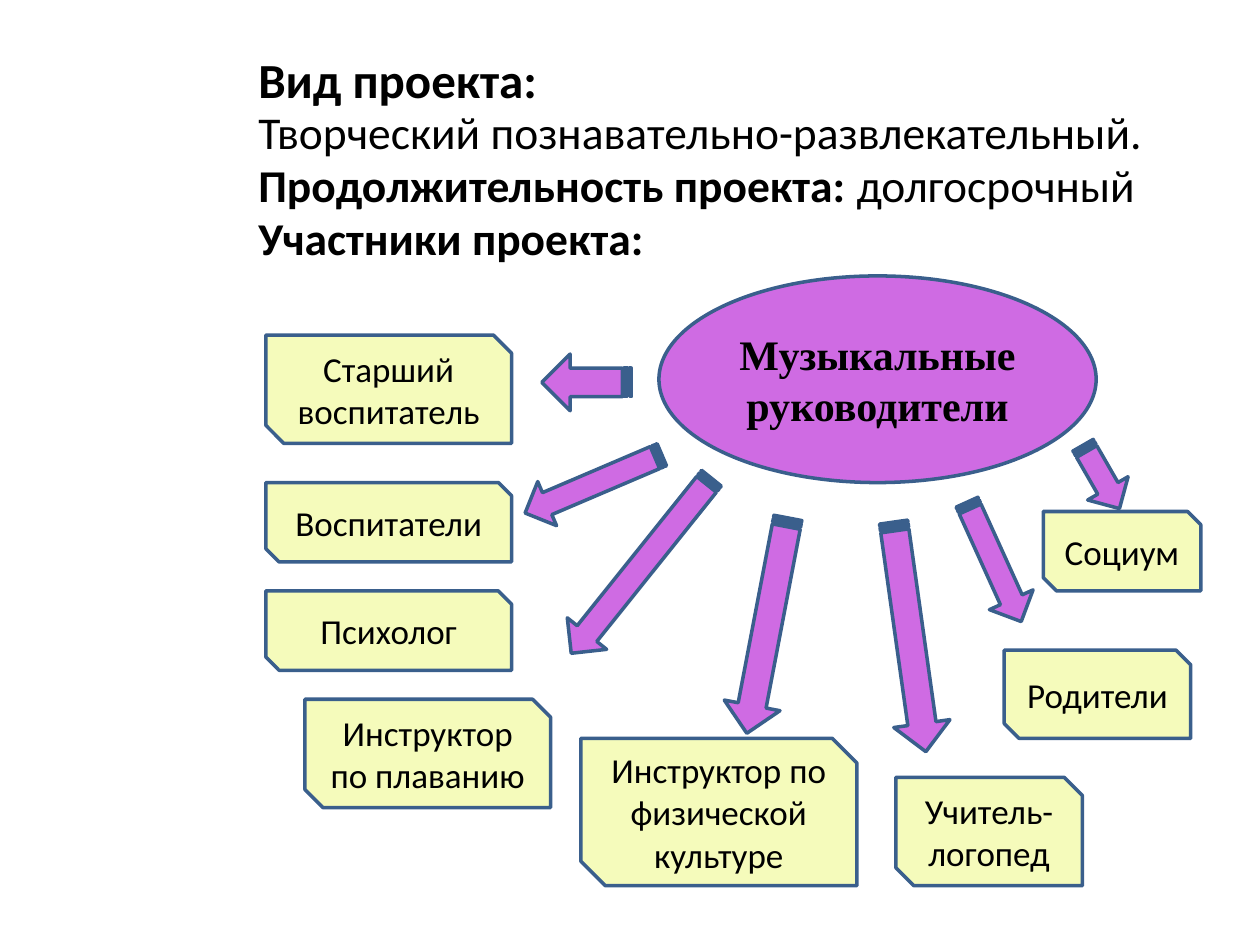
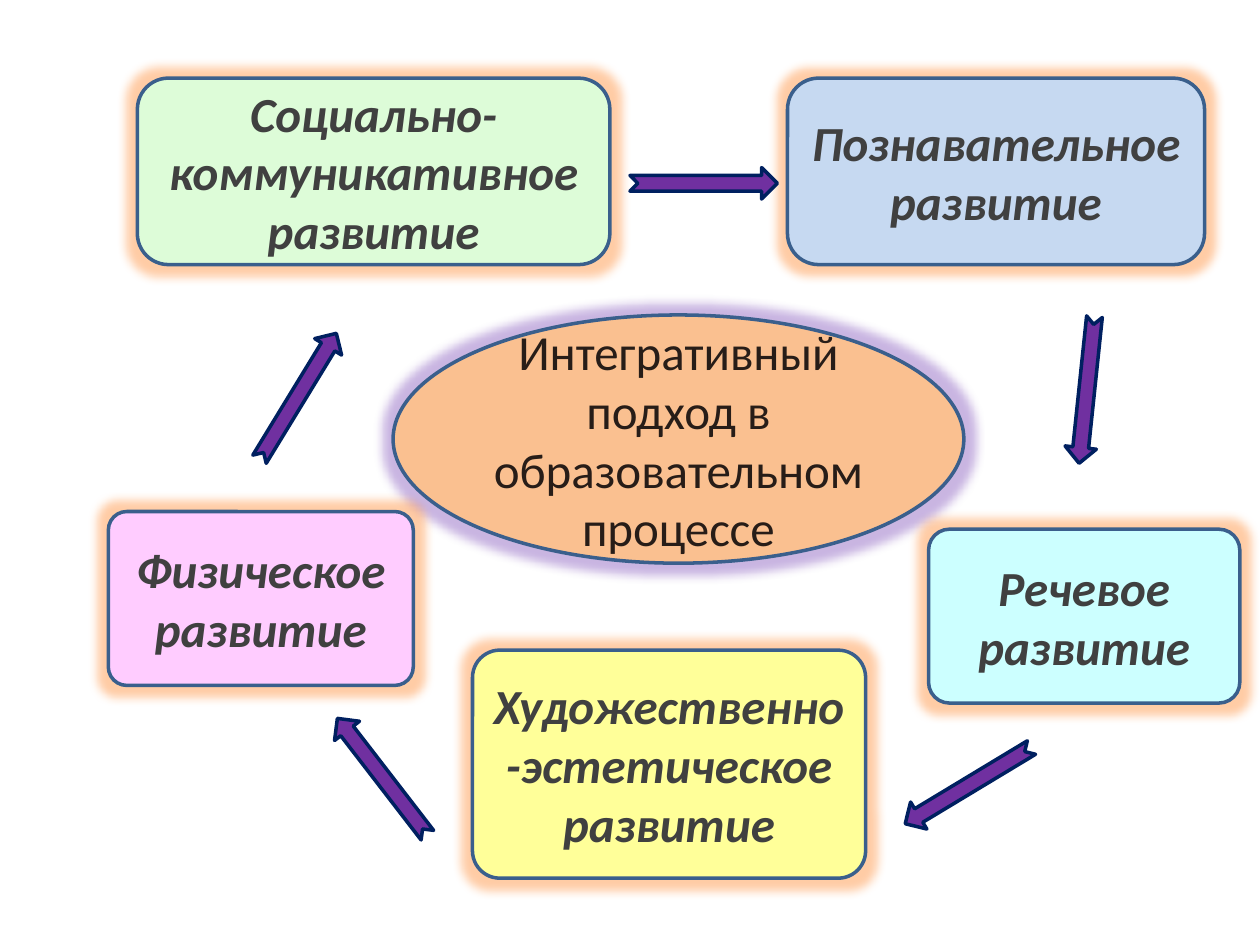
"""Builds two slides: the project's participants and the integrative approach."""
from lxml import etree
from pptx import Presentation
from pptx.dml.color import RGBColor
from pptx.enum.shapes import MSO_SHAPE
from pptx.enum.text import MSO_ANCHOR, PP_ALIGN
from pptx.oxml.ns import qn
from pptx.util import Inches, Pt

ELLIPSE = MSO_SHAPE.OVAL
SNIPPED = MSO_SHAPE.SNIP_2_DIAG_RECTANGLE
ROUNDED = MSO_SHAPE.ROUNDED_RECTANGLE
STRIPED_ARROW = MSO_SHAPE.STRIPED_RIGHT_ARROW
NOTCHED_ARROW = MSO_SHAPE.NOTCHED_RIGHT_ARROW
LEFT, CENTER = PP_ALIGN.LEFT, PP_ALIGN.CENTER
MIDDLE, TOP = MSO_ANCHOR.MIDDLE, MSO_ANCHOR.TOP

BLACK = RGBColor(0x00, 0x00, 0x00)
OUTLINE = RGBColor(0x3A, 0x5F, 0x8C)
ORCHID = RGBColor(0xCF, 0x6B, 0xE3)
LEMON = RGBColor(0xF5, 0xFB, 0xBB)
PEACH = RGBColor(0xFA, 0xC0, 0x90)
BROWN = RGBColor(0x27, 0x1D, 0x18)
GREY = RGBColor(0x40, 0x40, 0x40)
PURPLE = RGBColor(0x70, 0x30, 0xA0)
NAVY = RGBColor(0x00, 0x20, 0x60)
GREEN = RGBColor(0xDD, 0xFC, 0xD8)
BLUE = RGBColor(0xC6, 0xD9, 0xF1)
CYAN = RGBColor(0xCC, 0xFF, 0xFF)
YELLOW = RGBColor(0xFF, 0xFF, 0x99)
PINK = RGBColor(0xFF, 0xCC, 0xFF)
ORANGE_GLOW = RGBColor(0xFF, 0x80, 0x20)
VIOLET_GLOW = RGBColor(0x78, 0x46, 0xB6)


def add_figure(slide, kind, place, fill, line=OUTLINE, rotation=0, text="", size=20,
               color=BLACK, font="Calibri", bold=False, italic=False):
    figure = slide.shapes.add_shape(kind, *map(Inches, place))
    figure.rotation = rotation
    figure.shadow.inherit = False
    figure.fill.solid()
    figure.fill.fore_color.rgb = fill
    figure.line.color.rgb = line
    figure.line.width = Pt(2)
    if text:
        frame = figure.text_frame
        frame.word_wrap = True
        frame.vertical_anchor = MIDDLE
        frame.text = text
        paragraph = frame.paragraphs[0]
        paragraph.alignment = CENTER
        style = paragraph.runs[0].font
        style.name, style.size, style.bold, style.italic = font, Pt(size), bold, italic
        style.color.rgb = color
    return figure


def add_glow(figure, color):
    effects = figure._element.spPr.find(qn("a:effectLst"))
    glow = etree.SubElement(effects, qn("a:glow"), rad=str(Pt(11)))
    tint = etree.SubElement(glow, qn("a:srgbClr"), val=str(color))
    etree.SubElement(tint, qn("a:alpha"), val="40000")


deck = Presentation()
deck.slide_width, deck.slide_height = Inches(10), Inches(7.5)

participants = deck.slides.add_slide(deck.slide_layouts[1])
heading = participants.shapes.title
heading.left, heading.top, heading.width, heading.height = map(Inches, (1.95, 0, 3.52, 1.25))
heading.text_frame.text = "Вид проекта:"
heading.text_frame.vertical_anchor = MIDDLE
heading_line = heading.text_frame.paragraphs[0]
heading_line.alignment = LEFT
heading_font = heading_line.runs[0].font
heading_font.name, heading_font.size, heading_font.bold = "Calibri", Pt(28), True
heading_font.color.rgb = BLACK

details = participants.placeholders[1]
details.left, details.top, details.width, details.height = map(Inches, (1.95, 0.86, 7.85, 4.53))
details.text_frame.vertical_anchor = TOP
detail_lines = [
    [("Творческий познавательно-развлекательный.", False)],
    [("Продолжительность проекта: ", True), ("долгосрочный", False)],
    [("Участники проекта:", True)],
]
for index, parts in enumerate(detail_lines):
    paragraph = details.text_frame.add_paragraph() if index else details.text_frame.paragraphs[0]
    properties = paragraph._p.get_or_add_pPr()
    properties.set("marL", str(Inches(0.38)))
    properties.set("indent", str(Inches(-0.38)))
    etree.SubElement(properties, qn("a:buNone"))
    paragraph.line_spacing = 0.8
    paragraph.space_before = Pt(5.2 if index else 0)
    for words, bold in parts:
        run = paragraph.add_run()
        run.text = words
        run.font.name, run.font.size, run.font.bold = "Calibri", Pt(26), bold
        run.font.color.rgb = BLACK

rays = [
    ((6.3, 4.83, 1.84, 0.45), 82),
    ((4.3, 2.81, 0.71, 0.45), 180),
    ((5.22, 4.74, 1.74, 0.45), 100.8),
    ((7.37, 4.27, 1.04, 0.38), 65.6),
    ((4.2, 4.29, 1.78, 0.4), 128.7),
    ((4.12, 3.65, 1.18, 0.38), 156.9),
    ((8.45, 3.6, 0.58, 0.37), 60.1),
]
for place, angle in rays:
    add_figure(participants, STRIPED_ARROW, place, ORCHID, rotation=angle)

add_figure(participants, ELLIPSE, (5.23, 2.19, 3.47, 1.64), ORCHID,
           text="Музыкальные руководители", size=24, font="Times New Roman", bold=True)

roles = [
    ("Старший воспитатель", (2.11, 2.66, 1.95, 0.86)),
    ("Воспитатели", (2.11, 3.83, 1.95, 0.63)),
    ("Психолог", (2.11, 4.69, 1.95, 0.63)),
    ("Инструктор по плаванию", (2.42, 5.55, 1.95, 0.86)),
    ("Инструктор по физической культуре", (4.61, 5.86, 2.19, 1.17)),
    ("Учитель-логопед", (7.11, 6.17, 1.48, 0.86)),
    ("Родители", (7.97, 5.16, 1.48, 0.7)),
    ("Социум", (8.28, 4.06, 1.25, 0.63)),
]
for role, place in roles:
    add_figure(participants, SNIPPED, place, LEMON, text=role)

approach = deck.slides.add_slide(deck.slide_layouts[6])
core = add_figure(approach, ELLIPSE, (3.12, 2.5, 4.53, 1.97), PEACH, size=28, color=BROWN,
                  text="Интегративный подход в образовательном процессе")
add_glow(core, VIOLET_GLOW)

areas = [
    ("Социально-коммуникативное развитие", (1.09, 0.62, 3.75, 1.48), GREEN, 0.167),
    ("Познавательное развитие", (6.25, 0.62, 3.31, 1.48), BLUE, 0.167),
    ("Речевое развитие", (7.37, 4.2, 2.47, 1.38), CYAN, 0.12),
    ("Художественно-эстетическое развитие", (3.75, 5.16, 3.12, 1.81), YELLOW, 0.12),
    ("Физическое развитие", (0.86, 4.06, 2.42, 1.38), PINK, 0.106),
]
for area, place, fill, rounding in areas:
    card = add_figure(approach, ROUNDED, place, fill, text=area, size=28, color=GREY,
                      bold=True, italic=True)
    card.adjustments[0] = rounding
    add_glow(card, ORANGE_GLOW)

cycle_arrows = [(5, 1.33, 0), (8.04, 2.97, 96), (7.1, 6.11, 148.9),
                (2.45, 6.04, 232.4), (1.78, 3.02, 301.4)]
for left, top, angle in cycle_arrows:
    add_figure(approach, NOTCHED_ARROW, (left, top, 1.17, 0.25), PURPLE, NAVY, angle)

deck.save("out.pptx")
